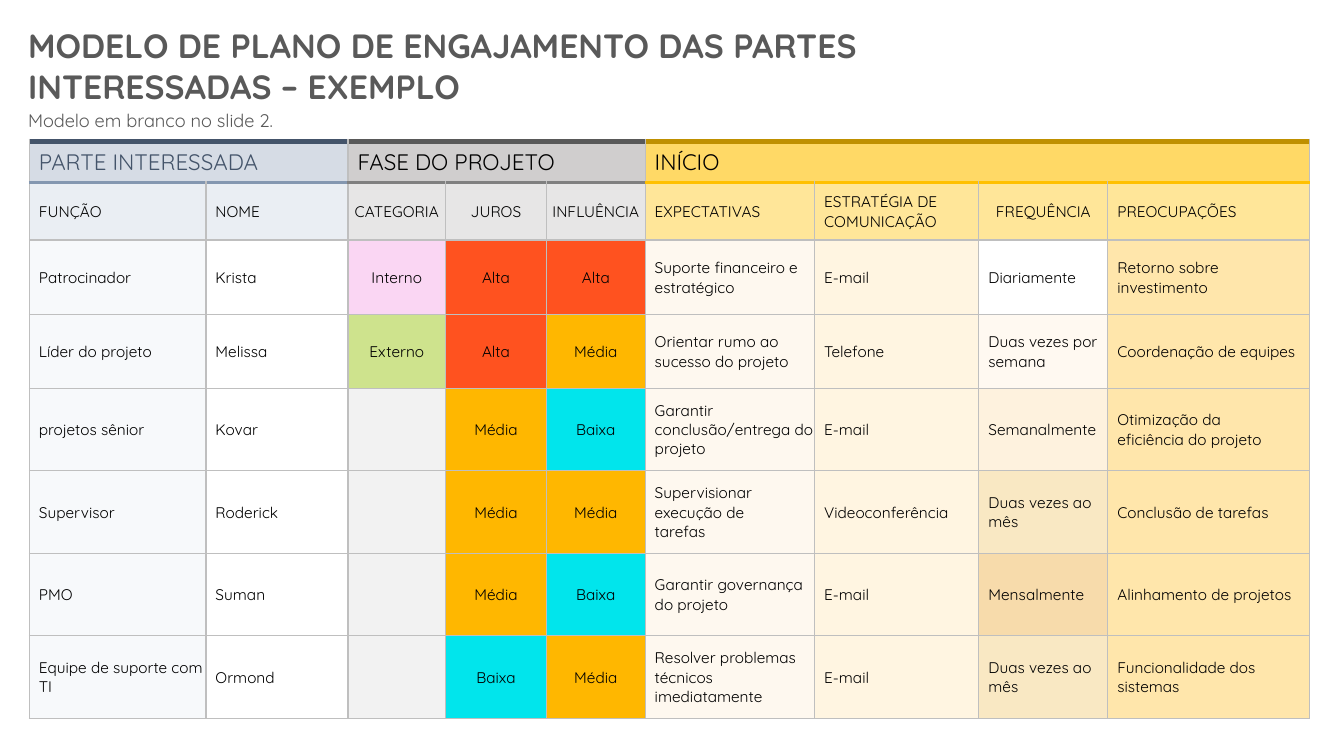
from lxml import etree
from pptx import Presentation
from pptx.dml.color import RGBColor
from pptx.enum.text import MSO_ANCHOR, MSO_AUTO_SIZE, PP_ALIGN
from pptx.oxml.ns import qn
from pptx.util import Cm, Pt

MIDDLE = MSO_ANCHOR.MIDDLE
GROW = MSO_AUTO_SIZE.SHAPE_TO_FIT_TEXT
LEFT, CENTER = PP_ALIGN.LEFT, PP_ALIGN.CENTER

FONT = "Quicksand"
COLORS = {
    "title": "595959", "text": "000000", "grid": "BFBFBF", "empty": "F2F2F2",
    "slate": "44546A", "slate_mid": "8497B0", "slate_light": "D6DCE5", "slate_pale": "EAEEF3",
    "gray": "595959", "gray_mid": "808080", "gray_light": "D0CECE", "gray_pale": "E7E6E6",
    "gold": "BF9000", "gold_mid": "FFC000", "gold_light": "FFD966", "gold_pale": "FFE699",
    "role": "F7F9FB", "name": "FFFFFF", "expectation": "FEF8EF",
    "strategy": "FFF5E1", "concern": "FFE6AB",
}
VALUE_COLORS = {
    "Interno": "FAD6F3", "Externo": "CEE38D",
    "Alta": "FF521F", "Média": "FFB700", "Baixa": "01E5EC",
    "Diariamente": "FFFFFF", "Duas vezes por semana": "FFF9F1", "Semanalmente": "FEF2DE",
    "Duas vezes ao mês": "F9E8C3", "Mensalmente": "F7DBAB",
}

# Heading, first column, last column, colour family, heading text colour
GROUPS = [
    ("PARTE INTERESSADA", 0, 1, "slate", "slate"),
    ("FASE DO PROJETO", 2, 4, "gray", "text"),
    ("INÍCIO", 5, 8, "gold", "text"),
]
# Heading, width in cm, body fill (None: the fill follows the value)
COLUMNS = [
    ("FUNÇÃO", 4.45, "role"),
    ("NOME", 3.58, "name"),
    ("CATEGORIA", 2.46, None),
    ("JUROS", 2.54, None),
    ("INFLUÊNCIA", 2.49, None),
    ("EXPECTATIVAS", 4.27, "expectation"),
    ("ESTRATÉGIA DE COMUNICAÇÃO", 4.14, "strategy"),
    ("FREQUÊNCIA", 3.25, None),
    ("PREOCUPAÇÕES", 5.08, "concern"),
]
RATING_COLUMNS = (2, 3, 4)
FREQUENCY_COLUMN = 7
ROW_HEIGHTS = [1.04, 1.45, 1.88, 1.85] + [2.08] * 4
STAKEHOLDERS = [
    ("Patrocinador", "Krista", "Interno", "Alta", "Alta", "Suporte financeiro e estratégico",
     "E-mail", "Diariamente", "Retorno sobre investimento"),
    ("Líder do projeto", "Melissa", "Externo", "Alta", "Média",
     "Orientar rumo ao sucesso do projeto",
     "Telefone", "Duas vezes por semana", "Coordenação de equipes"),
    ("projetos sênior", "Kovar", "", "Média", "Baixa", "Garantir conclusão/entrega do projeto",
     "E-mail", "Semanalmente", "Otimização da \veficiência do projeto"),
    ("Supervisor", "Roderick", "", "Média", "Média", "Supervisionar execução de \vtarefas",
     "Videoconferência", "Duas vezes ao mês", "Conclusão de tarefas"),
    ("PMO", "Suman", "", "Média", "Baixa", "Garantir governança do projeto",
     "E-mail", "Mensalmente", "Alinhamento de projetos"),
    ("Equipe de suporte com TI", "Ormond", "", "Baixa", "Média",
     "Resolver problemas técnicos imediatamente",
     "E-mail", "Duas vezes ao mês", "Funcionalidade dos sistemas"),
]


def format_text(text_frame, size, color, bold=False, alignment=LEFT):
    for paragraph in text_frame.paragraphs:
        paragraph.alignment = alignment
        for run in paragraph.runs:
            run.font.name = FONT
            run.font.size = Pt(size)
            run.font.bold = bold
            run.font.color.rgb = RGBColor.from_string(color)


def add_text(slide, text, left, top, width, height, size, bold=False):
    box = slide.shapes.add_textbox(Cm(left), Cm(top), Cm(width), Cm(height))
    text_frame = box.text_frame
    text_frame.word_wrap = True
    text_frame.auto_size = GROW
    text_frame.text = text
    format_text(text_frame, size, COLORS["title"], bold)


def set_borders(cell, top, bottom):
    """Draw the four edges; top and bottom are (colour, points) pairs."""
    properties = cell._tc.get_or_add_tcPr()
    side = (COLORS["grid"], 1)
    for tag, (color, width) in (("lnL", side), ("lnR", side), ("lnT", top), ("lnB", bottom)):
        line = etree.SubElement(properties, qn(f"a:{tag}"), w=str(Pt(width)))
        fill = etree.SubElement(line, qn("a:solidFill"))
        etree.SubElement(fill, qn("a:srgbClr"), val=color)


def fill_cell(cell, text, fill, size=11, color=COLORS["text"], centered=False, top=None, bottom=None):
    grid = (COLORS["grid"], 1)
    set_borders(cell, top or grid, bottom or grid)
    cell.fill.solid()
    cell.fill.fore_color.rgb = RGBColor.from_string(fill)
    cell.vertical_anchor = MIDDLE
    cell.margin_left = Cm(0.02 if centered else 0.24)
    cell.margin_right = cell.margin_top = Cm(0.02)
    cell.margin_bottom = 0
    if text:
        cell.text_frame.text = text
        format_text(cell.text_frame, size, color, alignment=CENTER if centered else LEFT)


def fill_headings(table):
    for heading, first, last, family, text_color in GROUPS:
        rule = (COLORS[f"{family}_mid"], 2.25)
        for index in range(first, last + 1):
            fill_cell(table.cell(0, index), heading if index == first else "",
                      COLORS[f"{family}_light"], size=16, color=COLORS[text_color],
                      top=(COLORS[family], 4.5), bottom=rule)
            fill_cell(table.cell(1, index), COLUMNS[index][0], COLORS[f"{family}_pale"],
                      centered=index in (*RATING_COLUMNS, FREQUENCY_COLUMN), top=rule)
        table.cell(0, first).merge(table.cell(0, last))


def fill_stakeholders(table):
    for row, values in enumerate(STAKEHOLDERS, start=2):
        for index, value in enumerate(values):
            body = COLUMNS[index][2]
            fill = COLORS[body] if body else VALUE_COLORS.get(value, COLORS["empty"])
            fill_cell(table.cell(row, index), value, fill, centered=index in RATING_COLUMNS)


def add_plan_table(slide, left, top):
    widths = [width for _, width, _ in COLUMNS]
    table = slide.shapes.add_table(len(ROW_HEIGHTS), len(COLUMNS), Cm(left), Cm(top),
                                   Cm(sum(widths)), Cm(sum(ROW_HEIGHTS))).table
    table.first_row = table.horz_banding = False
    for column, width in zip(table.columns, widths):
        column.width = Cm(width)
    for row, height in zip(table.rows, ROW_HEIGHTS):
        row.height = Cm(height)
    fill_headings(table)
    fill_stakeholders(table)


def main():
    presentation = Presentation()
    presentation.slide_width, presentation.slide_height = Cm(33.87), Cm(19.05)
    slide = presentation.slides.add_slide(presentation.slide_layouts[6])
    add_text(slide, "MODELO DE PLANO DE ENGAJAMENTO DAS PARTES INTERESSADAS – EXEMPLO",
             0.46, 0.51, 23.19, 1.27, size=24, bold=True)
    add_plan_table(slide, 0.74, 3.56)
    add_text(slide, "Modelo em branco no slide 2.", 0.46, 2.62, 11.76, 0.81, size=13)
    presentation.save("out.pptx")


if __name__ == "__main__":
    main()
